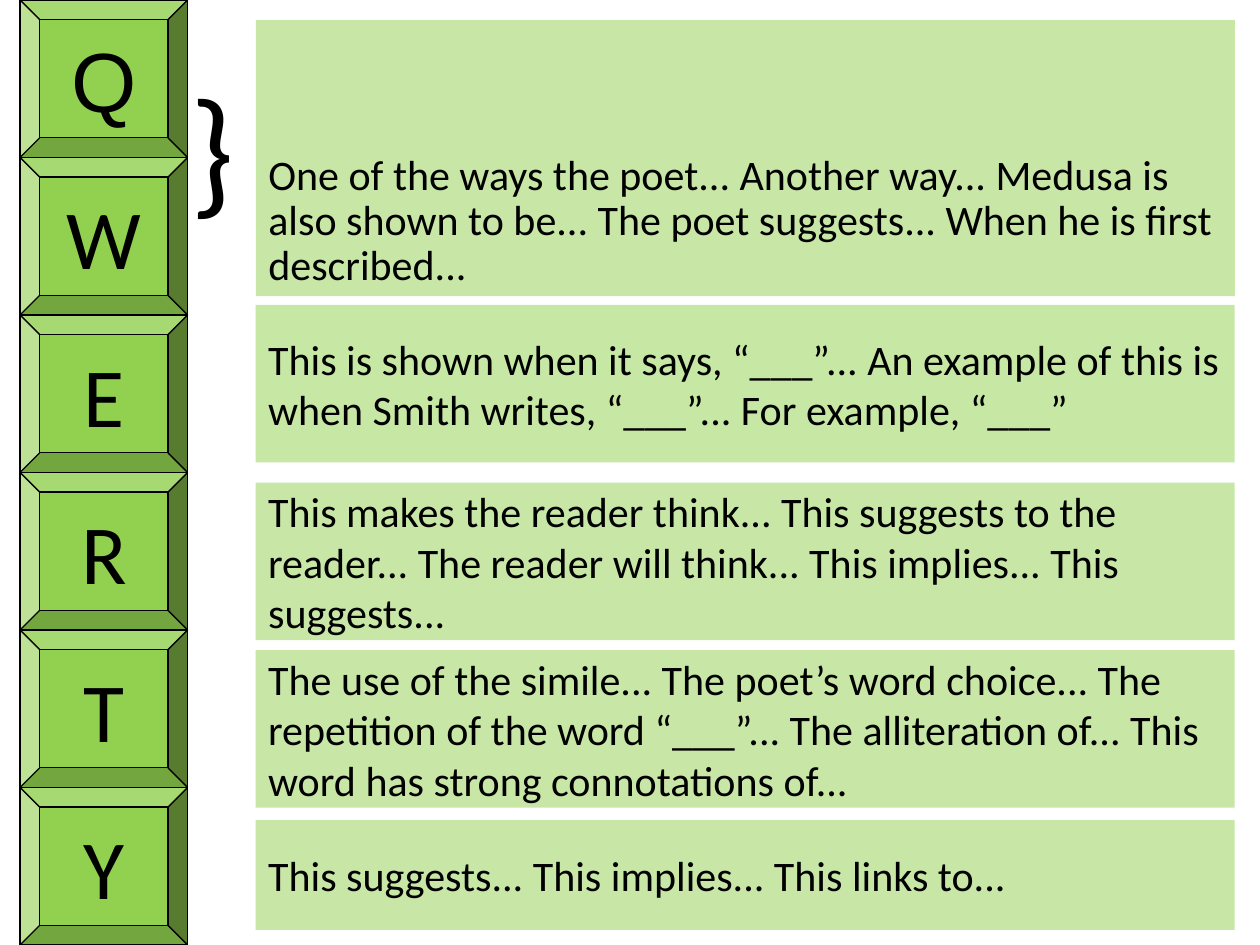
import pptx
import pptx.util
import pptx.dml.color
import pptx.enum.shapes
import pptx.enum.text
import pptx.oxml.ns
import lxml.etree

Inches = pptx.util.Inches
ALIGN = pptx.enum.text.PP_ALIGN
ANCHOR = pptx.enum.text.MSO_ANCHOR
SHAPE = pptx.enum.shapes.MSO_SHAPE

GREEN = "92D050"
BLACK = "000000"
KEY_LEFT, KEY_WIDTH, KEY_HEIGHT = 0.16, 1.33, 1.25
PANEL_LEFT, PANEL_WIDTH = 2.03, 7.77

KEYS = [("Q", "Arial")] + [(letter, "Calibri") for letter in "WERTY"]
OPENERS = "One of the ways the poet... Another way... Medusa is also shown to be... The poet suggests... When he is first described..."
PANELS = [
    (2.42, 1.25, 51, "This is shown when it says, “___”... An example of this is when Smith writes, “___”... For example, “___”"),
    (3.83, 1.25, 50, "This makes the reader think... This suggests to the reader... The reader will think... This implies... This suggests..."),
    (5.16, 1.25, 50, "The use of the simile... The poet’s word choice... The repetition of the word “___”... The alliteration of... This word has strong connotations of..."),
    (6.51, 0.87, 50, "This suggests... This implies... This links to..."),
]


def colour(value):
    return pptx.dml.color.RGBColor.from_string(value)


def write(shape, text, size=24, font="Calibri", align=ALIGN.LEFT,
          anchor=ANCHOR.MIDDLE, spacing=1.0, wrap=True):
    frame = shape.text_frame
    frame.word_wrap = wrap
    frame.auto_size = pptx.enum.text.MSO_AUTO_SIZE.NONE
    frame.vertical_anchor = anchor
    para = frame.paragraphs[0]
    para.alignment = align
    para.line_spacing = spacing
    span = para.add_run()
    span.text = text
    span.font.size = pptx.util.Pt(size)
    span.font.name = font
    span.font.color.rgb = colour(BLACK)


def fill_green(shape, opacity=100):
    shape.fill.solid()
    shape.fill.fore_color.rgb = colour(GREEN)
    if opacity < 100:
        tint = shape.fill._xPr.find(".//" + pptx.oxml.ns.qn("a:srgbClr"))
        alpha = lxml.etree.SubElement(tint, pptx.oxml.ns.qn("a:alpha"))
        alpha.set("val", str(opacity * 1000))


def add_title(page, left, top, width, height):
    title = page.shapes.title
    title.left, title.top = Inches(left), Inches(top)
    title.width, title.height = Inches(width), Inches(height)
    fill_green(title, 50)
    write(title, OPENERS, anchor=ANCHOR.BOTTOM, spacing=0.9)


def add_key(page, left, top, width, height, letter, font):
    key = page.shapes.add_shape(SHAPE.BEVEL, Inches(left), Inches(top),
                                Inches(width), Inches(height))
    key.shadow.inherit = False
    fill_green(key)
    key.line.color.rgb = colour(BLACK)
    key.line.width = pptx.util.Pt(0.75)
    write(key, letter, size=48, font=font, align=ALIGN.CENTER)


def add_brace(page, left, top, width, height):
    box = page.shapes.add_textbox(Inches(left), Inches(top), Inches(width), Inches(height))
    write(box, "}", size=80, anchor=ANCHOR.TOP, wrap=False)


def add_panel(page, left, top, width, height, opacity, text):
    panel = page.shapes.add_shape(SHAPE.RECTANGLE, Inches(left), Inches(top),
                                  Inches(width), Inches(height))
    panel.shadow.inherit = False
    fill_green(panel, opacity)
    panel.line.fill.background()
    write(panel, text)


def main():
    deck = pptx.Presentation()
    deck.slide_width, deck.slide_height = Inches(10), Inches(7.5)
    page = deck.slides.add_slide(deck.slide_layouts.get_by_name("Title Only"))
    add_title(page, PANEL_LEFT, 0.16, PANEL_WIDTH, 2.19)
    for row, (letter, font) in enumerate(KEYS):
        add_key(page, KEY_LEFT, row * KEY_HEIGHT, KEY_WIDTH, KEY_HEIGHT, letter, font)
    add_brace(page, 1.41, 0.43, 0.55, 1.45)
    for top, height, opacity, text in PANELS:
        add_panel(page, PANEL_LEFT, top, PANEL_WIDTH, height, opacity, text)
    deck.save("out.pptx")


if __name__ == "__main__":
    main()
